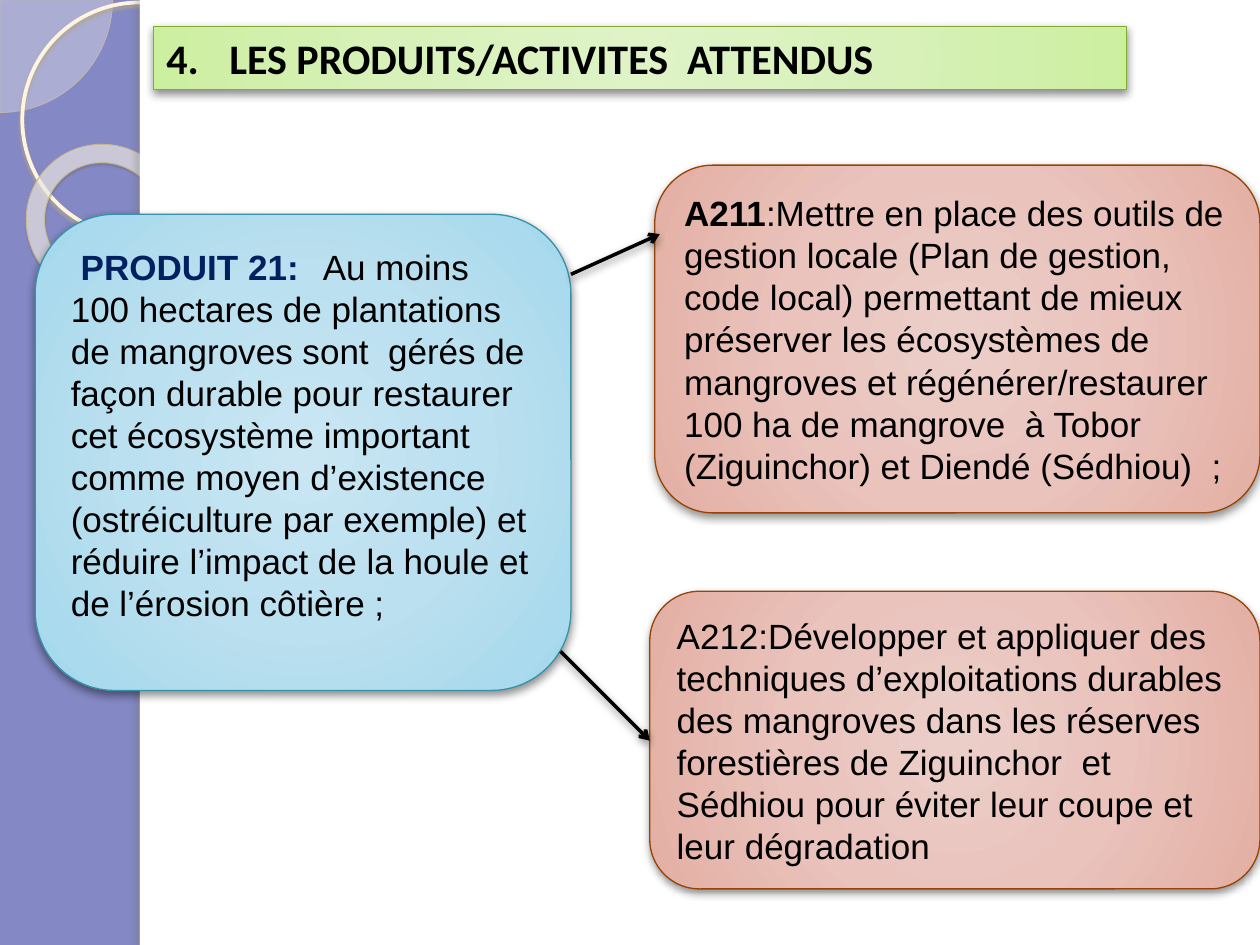
from lxml import etree
from pptx import Presentation
from pptx.dml.color import RGBColor as Rgb
from pptx.enum.shapes import MSO_CONNECTOR as Link, MSO_SHAPE as Geo
from pptx.enum.text import MSO_ANCHOR as Anchor, MSO_AUTO_SIZE as Fit, PP_ALIGN as Align
from pptx.oxml import parse_xml
from pptx.oxml.ns import nsdecls, qn
from pptx.util import Cm, Pt

BLACK = Rgb(0x00, 0x00, 0x00)
WHITE = Rgb(0xFF, 0xFF, 0xFF)
NAVY = Rgb(0x00, 0x20, 0x60)
VIOLET = Rgb(0x84, 0x88, 0xC4)
CREAM = Rgb(0xFE, 0xFA, 0xF4)
IVORY = Rgb(0xFF, 0xFC, 0xF6)
SAND = Rgb(0xD3, 0xC3, 0x9F)
PALE = Rgb(0xFF, 0xF5, 0xDE)
KHAKI = Rgb(0xC7, 0xB8, 0x93)
TAUPE = Rgb(0xB0, 0xA6, 0x8F)
OLIVE = Rgb(0x5A, 0x54, 0x44)
GREY = Rgb(0x73, 0x6F, 0x63)
RUST = Rgb(0x96, 0x43, 0x05)
TEAL = Rgb(0x38, 0x91, 0xA7)
GREEN = Rgb(0x84, 0xAA, 0x33)

# Radial fills, from the centre outwards
STOPS = (0, 50, 97, 100)
PINKS = (Rgb(0xEC, 0xCE, 0xC9), Rgb(0xE9, 0xC3, 0xBC),
         Rgb(0xE4, 0xAF, 0xA4), Rgb(0xE4, 0xA8, 0x9B))
BLUES = (Rgb(0xC9, 0xE6, 0xF2), Rgb(0xBB, 0xE0, 0xEF),
         Rgb(0xA4, 0xD8, 0xED), Rgb(0x9B, 0xD7, 0xEE))
LIMES = (Rgb(0xDF, 0xF3, 0xC7), Rgb(0xD8, 0xF1, 0xBA),
         Rgb(0xCD, 0xEF, 0xA2), Rgb(0xCA, 0xF1, 0x99))

GOAL = ("Au moins 100 hectares de plantations de mangroves sont  gérés de façon "
        "durable pour restaurer cet écosystème important comme moyen d’existence "
        "(ostréiculture par exemple) et réduire l’impact de la houle et de "
        "l’érosion côtière ;")
TOOLS = (":Mettre en place des outils de gestion locale (Plan de gestion, code "
         "local) permettant de mieux préserver les écosystèmes de mangroves et "
         "régénérer/restaurer 100 ha de mangrove  à Tobor (Ziguinchor) et Diendé "
         "(Sédhiou)  ;")
SKILLS = ("A212:Développer et appliquer des techniques d’exploitations durables des "
          "mangroves dans les réserves forestières de Ziguinchor  et Sédhiou pour "
          "éviter leur coupe et leur dégradation")


def add_shade(shape, color=BLACK, alpha=43, blur=5, dist=2, angle=90):
    """Give a shape or connector an outer shadow; blur and dist in points."""
    props = shape.element.spPr
    for old in props.findall(qn("a:effectLst")):
        props.remove(old)
    props.append(parse_xml(
        f'<a:effectLst {nsdecls("a")}><a:outerShdw blurRad="{Pt(blur)}" '
        f'dist="{Pt(dist)}" dir="{angle * 60000}" algn="ctr" rotWithShape="0">'
        f'<a:srgbClr val="{color}"><a:alpha val="{alpha * 1000}"/></a:srgbClr>'
        f'</a:outerShdw></a:effectLst>'))


def add_glow(shape, colors):
    """Fill a shape with a gradient that spreads from its centre."""
    shape.fill.solid()
    marks = "".join(f'<a:gs pos="{stop * 1000}"><a:srgbClr val="{color}"/></a:gs>'
                    for stop, color in zip(STOPS, colors))
    props = shape.element.spPr
    props.replace(props.find(qn("a:solidFill")), parse_xml(
        f'<a:gradFill {nsdecls("a")} rotWithShape="1"><a:gsLst>{marks}</a:gsLst>'
        '<a:path path="circle"><a:fillToRect l="50000" t="50000" r="50000" '
        'b="50000"/></a:path></a:gradFill>'))


def set_line(shape, color, width):
    shape.line.color.rgb = color
    shape.line.width = Pt(width)


def add_form(slide, geo, box, fill=None, alpha=100, line=None, width=0.75):
    form = slide.shapes.add_shape(geo, *map(Cm, box))
    form.shadow.inherit = False
    if fill is None:
        form.fill.background()
    else:
        form.fill.solid()
        form.fill.fore_color.rgb = fill
        tint = form.element.spPr.find(qn("a:solidFill"))[0]
        etree.SubElement(tint, qn("a:alpha")).set("val", str(alpha * 1000))
    if line is None:
        form.line.fill.background()
    else:
        set_line(form, line, width)
    return form


def add_decor(slide):
    """Draw the violet side band with its rings, then the white page."""
    slide.background.fill.solid()
    slide.background.fill.fore_color.rgb = VIOLET
    pie = add_form(slide, Geo.PIE, (-2.27, -2.27, 4.54, 4.54), CREAM, 33, SAND, 0.25)
    pie.adjustments[0] = 0
    pie.adjustments[1] = 54
    hoop = add_form(slide, Geo.OVAL, (0.45, 0.05, 4.73, 4.73), line=PALE, width=2.15)
    add_shade(hoop, TAUPE, 85, 2, 2)
    ring = add_form(slide, Geo.DONUT, (0.52, 2.92, 3.12, 3.07), IVORY, 60, KHAKI, 0.58)
    ring.adjustments[0] = 0.12
    ring.rotation = 38.6
    add_shade(ring, OLIVE, 35, 1, 1.2, 75)
    add_form(slide, Geo.RECTANGLE, (2.82, 0, 22.58, 19.05), WHITE)
    edge = add_form(slide, Geo.RECTANGLE, (2.82, 0, 0.2, 19.05), WHITE)
    add_shade(edge, GREY, 25, 3, 3, 180)


def add_card(slide, box, colors, line, text, lead="", tone=BLACK):
    """Add a rounded card whose text may open with a bold lead."""
    card = add_form(slide, Geo.ROUNDED_RECTANGLE, box, line=line)
    add_glow(card, colors)
    add_shade(card)
    frame = card.text_frame
    frame.word_wrap = True
    frame.vertical_anchor = Anchor.MIDDLE
    para = frame.paragraphs[0]
    para.alignment = Align.LEFT
    para.font.name = "Arial"
    para.font.size = Pt(20)
    if lead:
        head = para.add_run()
        head.text = lead
        head.font.bold = True
        head.font.color.rgb = tone
    body = para.add_run()
    body.text = text
    body.font.color.rgb = BLACK
    return card


def set_tab(para, indent, stop):
    """Indent the first line and set one tab stop, both in centimetres."""
    props = para._p.get_or_add_pPr()
    props.set("marL", "0")
    props.set("indent", str(Cm(indent)))
    props.append(parse_xml(f'<a:tabLst {nsdecls("a")}>'
                           f'<a:tab pos="{Cm(stop)}" algn="l"/></a:tabLst>'))


def add_arrow(slide, start, end):
    arrow = slide.shapes.add_connector(Link.STRAIGHT, *map(Cm, start + end))
    set_line(arrow, BLACK, 2)
    tip = etree.SubElement(arrow.line._get_or_add_ln(), qn("a:tailEnd"))
    tip.set("type", "arrow")
    add_shade(arrow)


def set_title(slide, text, number):
    title = slide.shapes.title
    title.left, title.top, title.width, title.height = map(Cm, (3.1, 0.53, 19.61, 1.27))
    add_glow(title, LIMES)
    set_line(title, GREEN, 0.75)
    add_shade(title)
    frame = title.text_frame
    frame.text = text
    frame.auto_size = Fit.NONE
    frame.vertical_anchor = Anchor.MIDDLE
    para = frame.paragraphs[0]
    para.alignment = Align.LEFT
    para.font.name = "Calibri"
    para.font.size = Pt(24)
    para.font.bold = True
    para.font.color.rgb = BLACK
    props = para._p.get_or_add_pPr()
    props.set("marL", str(Cm(1.27)))
    props.set("indent", str(Cm(-1.27)))
    props.insert(0, parse_xml(f'<a:buAutoNum {nsdecls("a")} type="arabicPeriod" '
                              f'startAt="{number}"/>'))
    # Bring the title in front of the white page
    title.element.getparent().append(title.element)


def main():
    deck = Presentation()
    deck.slide_width, deck.slide_height = Cm(25.4), Cm(19.05)
    slide = deck.slides.add_slide(deck.slide_layouts[5])
    add_decor(slide)
    add_card(slide, (13.2, 3.33, 12.2, 7.01), PINKS, RUST, TOOLS, "A211")
    add_card(slide, (13.1, 11.92, 12.3, 6), PINKS, RUST, SKILLS)
    goal = add_card(slide, (0.71, 4.32, 10.8, 9.6), BLUES, TEAL,
                    GOAL, "PRODUIT 21:\t", NAVY)
    goal.text_frame.margin_bottom = Cm(0.83)
    set_tab(goal.text_frame.paragraphs[0], 0.2, 5.2)
    add_arrow(slide, (11.51, 5.53), (13.3, 4.72))
    add_arrow(slide, (11.3, 13.13), (13.1, 14.93))
    set_title(slide, "LES PRODUITS/ACTIVITES  ATTENDUS", 4)
    deck.save("out.pptx")


if __name__ == "__main__":
    main()
